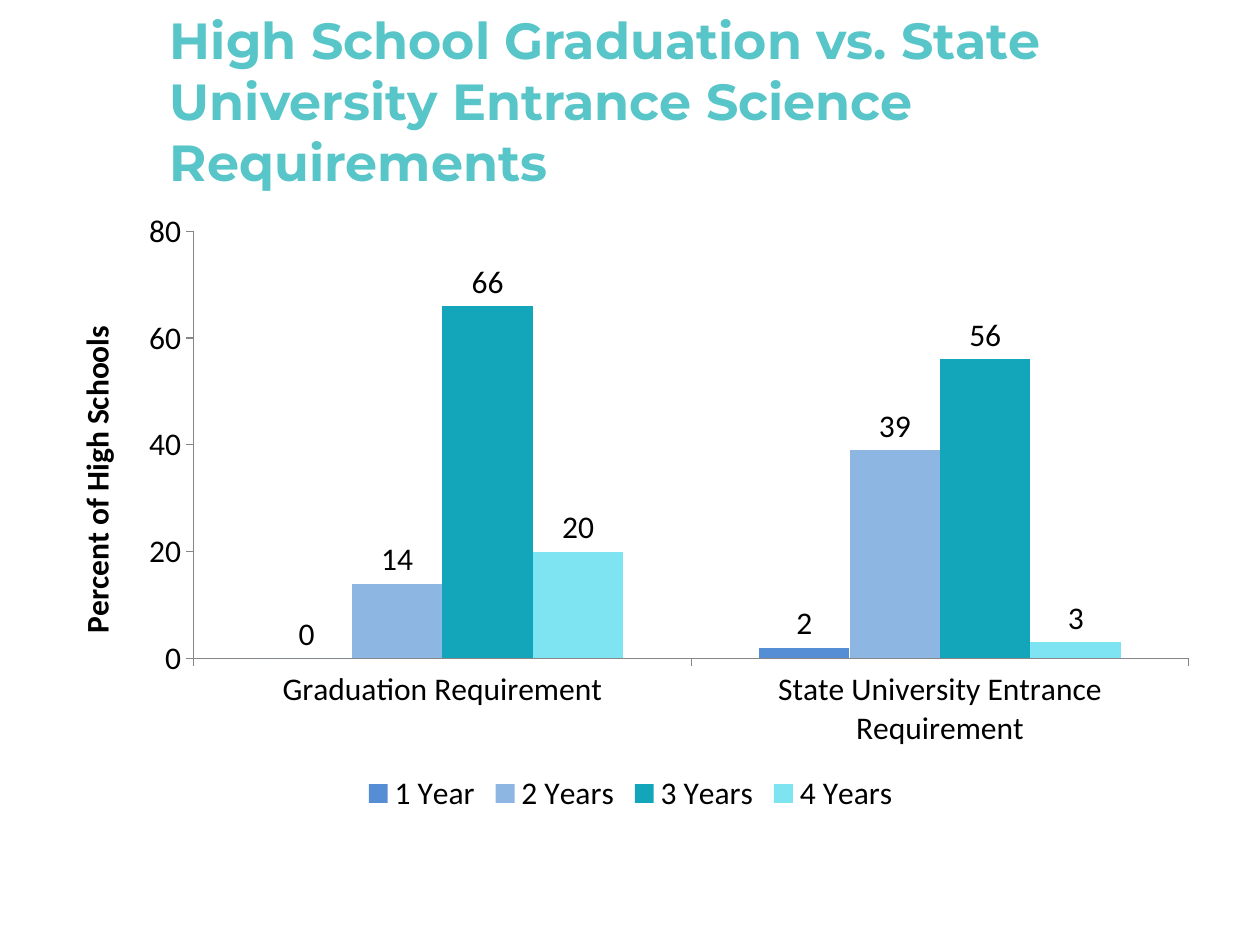
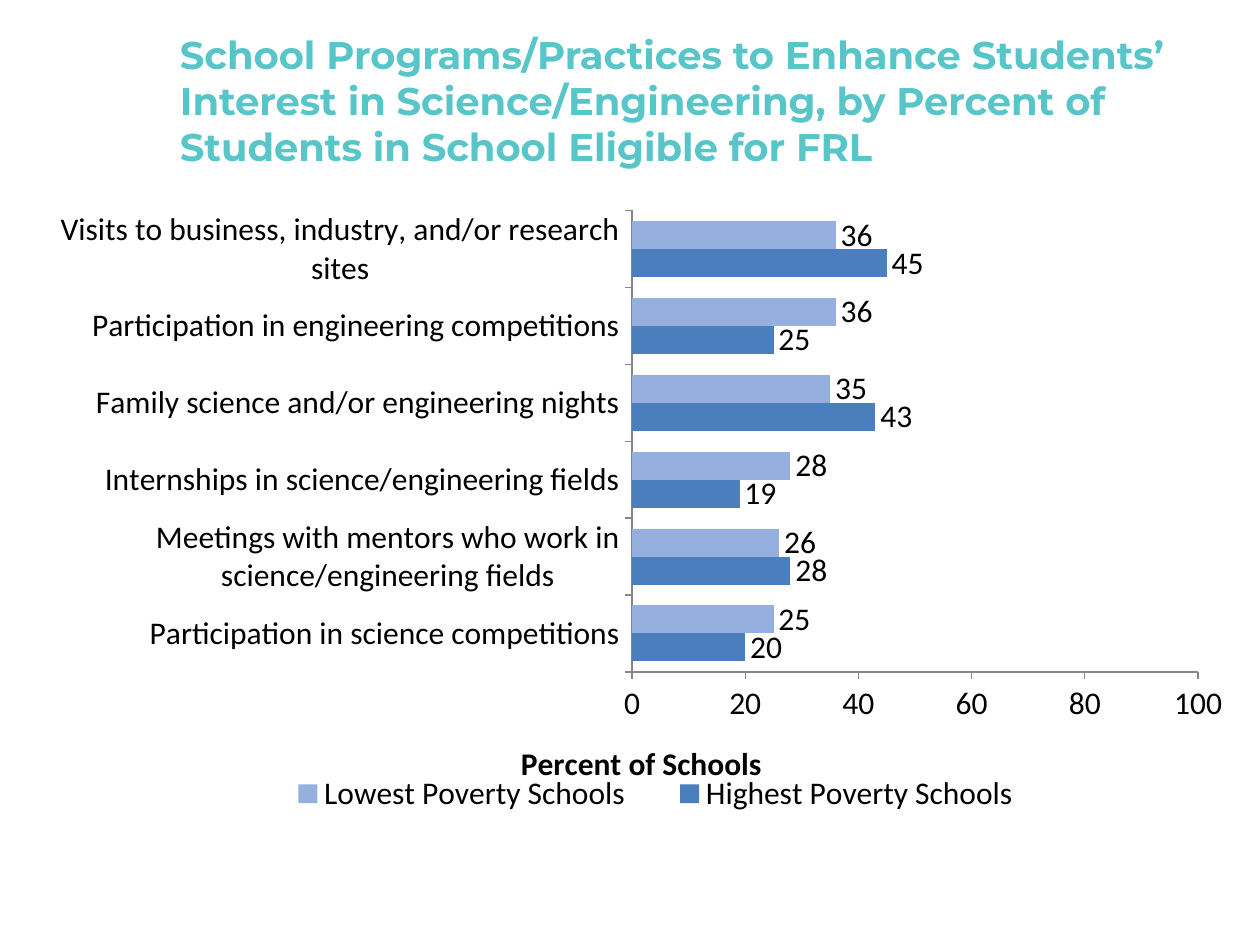
import pptx
import pptx.util
import pptx.dml.color
import pptx.chart.data
import pptx.enum.chart
import pptx.enum.text
import pptx.oxml
import pptx.oxml.ns

Inches, Pt = pptx.util.Inches, pptx.util.Pt
qn = pptx.oxml.ns.qn
XL = pptx.enum.chart

COLORS = {
    "title": "58C5C9", "text": "000000", "axis": "868686",
    "blue": "558ED5", "light blue": "8EB6E3",
    "teal": "13A6BA", "aqua": "7FE4F2",
    "dark blue": "4A7EBD", "pale blue": "95B0DF",
}
TITLE_FONT, CHART_FONT = "Montserrat", "Calibri"

# Boxes are left, top, width, height in inches; layouts are fractions of the chart.
SLIDES = [
    {
        "title": "High School Graduation vs. State University Entrance "
                 "Science Requirements",
        "title_box": (1.25, 0.17, 8.25, 1.25),
        "title_size": 29,
        "type": XL.XL_CHART_TYPE.COLUMN_CLUSTERED,
        "chart_box": (0.38, 1.58, 9.25, 4.92),
        "axis_title": "Percent of High Schools",
        "max": 80,
        "gap": 150,
        "plot": (0.125, 0.052, 0.854, 0.689),
        "legend": None,
        "categories": ["Graduation Requirement",
                       "State University Entrance Requirement"],
        "series": [
            ("1 Year", "blue", (0, 2)),
            ("2 Years", "light blue", (14, 39)),
            ("3 Years", "teal", (66, 56)),
            ("4 Years", "aqua", (20, 3)),
        ],
    },
    {
        "title": "School Programs/Practices to Enhance Students’ Interest in "
                 "Science/Engineering, by Percent of Students in School "
                 "Eligible for FRL",
        "title_box": (1.33, 0.17, 8.17, 1.25),
        "title_size": 22,
        "type": XL.XL_CHART_TYPE.BAR_CLUSTERED,
        "chart_box": (0.42, 1.42, 9.38, 5.11),
        "axis_title": "Percent of Schools",
        "max": 100,
        "gap": 75,
        "plot": (0.49, 0.049, 0.479, 0.717),
        "legend": (0.17, 0.91, 0.68, 0.09),
        "categories": [
            "Participation in science competitions",
            "Meetings with mentors who work in science/engineering fields",
            "Internships in science/engineering fields",
            "Family science and/or engineering nights",
            "Participation in engineering competitions",
            "Visits to business, industry, and/or research sites",
        ],
        "series": [
            ("Highest Poverty Schools", "dark blue", (20, 28, 19, 43, 25, 45)),
            ("Lowest Poverty Schools", "pale blue", (25, 26, 28, 35, 36, 36)),
        ],
    },
]


def rgb(name):
    return pptx.dml.color.RGBColor.from_string(COLORS[name])


def set_font(font, name, size, color, bold=False):
    font.name, font.size, font.bold = name, Pt(size), bold
    font.color.rgb = rgb(color)


def set_layout(parent, index, box, inner=False):
    """Give a chart part a manual layout as child number index."""
    for old in parent.findall(qn("c:layout")):
        parent.remove(old)
    settings = [("layoutTarget", "inner")] if inner else []
    settings += [("xMode", "edge"), ("yMode", "edge")]
    settings += zip("xywh", box)
    items = "".join(f'<c:{tag} val="{val}"/>' for tag, val in settings)
    parent.insert(index, pptx.oxml.parse_xml(
        f'<c:layout {pptx.oxml.ns.nsdecls("c")}>'
        f'<c:manualLayout>{items}</c:manualLayout></c:layout>'))


def add_title(s, content):
    tf = s.shapes.add_textbox(*map(Inches, content["title_box"])).text_frame
    tf.word_wrap = True
    tf.vertical_anchor = pptx.enum.text.MSO_ANCHOR.MIDDLE
    p = tf.paragraphs[0]
    p.text = content["title"]
    set_font(p.font, TITLE_FONT, content["title_size"], "title", bold=True)


def style_axes(chart, content):
    for axis in (chart.category_axis, chart.value_axis):
        axis.has_major_gridlines = False
        axis.major_tick_mark = XL.XL_TICK_MARK.OUTSIDE
        axis.minor_tick_mark = XL.XL_TICK_MARK.NONE
        axis.format.line.color.rgb = rgb("axis")
        axis.format.line.width = Pt(0.75)
    values = chart.value_axis
    values.minimum_scale, values.maximum_scale = 0, content["max"]
    values.major_unit = 20
    p = values.axis_title.text_frame.paragraphs[0]
    p.text = content["axis_title"]
    set_font(p.font, CHART_FONT, 18, "text", bold=True)


def add_bar_chart(s, content):
    data = pptx.chart.data.CategoryChartData(number_format="0")
    data.categories = content["categories"]
    for name, _, values in content["series"]:
        data.add_series(name, values)
    chart = s.shapes.add_chart(
        content["type"], *map(Inches, content["chart_box"]), data).chart
    chart.has_title = False
    set_font(chart.font, CHART_FONT, 18, "text")
    style_axes(chart, content)

    plot = chart.plots[0]
    plot.vary_by_categories = False
    plot.gap_width, plot.overlap = content["gap"], 0
    plot.has_data_labels = True
    plot.data_labels.show_value = True
    plot.data_labels.position = XL.XL_LABEL_POSITION.OUTSIDE_END
    for series, (_, color, _) in zip(plot.series, content["series"]):
        series.format.fill.solid()
        series.format.fill.fore_color.rgb = rgb(color)
        series.invert_if_negative = False

    chart.has_legend = True
    legend = chart.legend
    legend.position = XL.XL_LEGEND_POSITION.BOTTOM
    legend.include_in_layout = False
    plot_area = chart.element.find(".//" + qn("c:plotArea"))
    set_layout(plot_area, 0, content["plot"], inner=True)
    if content["legend"]:
        set_layout(chart.element.find(".//" + qn("c:legend")), 1,
                   content["legend"])


def main():
    prs = pptx.Presentation()
    prs.slide_width, prs.slide_height = Inches(10), Inches(7.5)
    for content in SLIDES:
        s = prs.slides.add_slide(prs.slide_layouts[6])
        add_bar_chart(s, content)
        add_title(s, content)
    prs.save("out.pptx")


if __name__ == "__main__":
    main()
